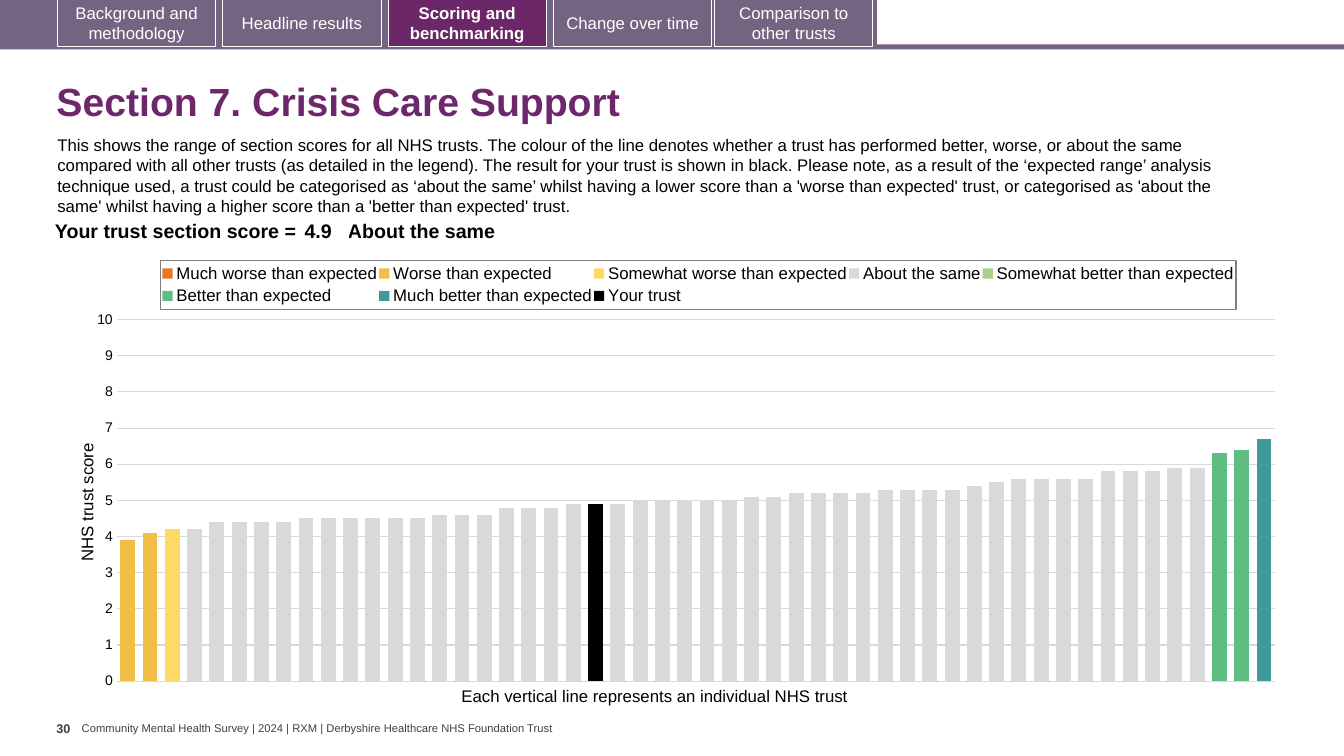
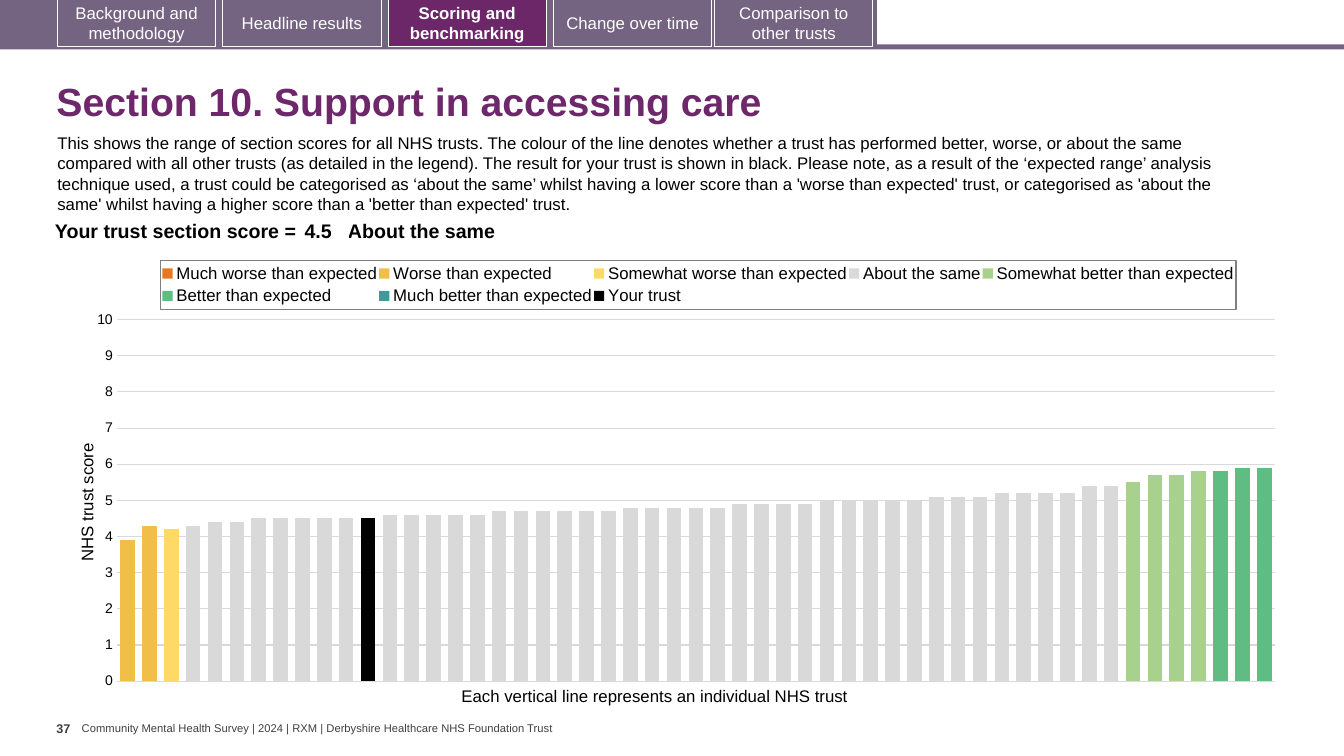
from copy import deepcopy
from dataclasses import dataclass

from pptx import Presentation
from pptx.chart.data import CategoryChartData as Data
from pptx.dml.color import RGBColor as Rgb
from pptx.enum.chart import XL_CHART_TYPE as Kind, XL_LEGEND_POSITION as Spot, XL_TICK_MARK as Tick
from pptx.enum.shapes import MSO_SHAPE as Form
from pptx.enum.text import MSO_ANCHOR as Anchor, MSO_AUTO_SIZE as Fit, PP_ALIGN as Align
from pptx.oxml import parse_xml
from pptx.oxml.ns import nsdecls, qn
from pptx.util import Inches, Pt


@dataclass(frozen=True)
class Theme:
    face: str = "Arial"
    band: str = "756382"
    live: str = "6B2768"
    head: str = "6D276A"
    ink: str = "000000"
    soft: str = "404040"
    white: str = "FFFFFF"
    grid: str = "D9D9D9"
    edge: str = "7F7F7F"
    huge: float = 28
    big: float = 14
    body: float = 12
    tick: float = 10
    page: float = 9
    foot: float = 8
    thin: float = 0.75


look = Theme()
deck = Presentation()
deck.slide_width, deck.slide_height = Inches(13.33), Inches(7.5)
col, row = deck.slide_width / 100, deck.slide_height / 100

tabs = [
    (4.28, "Background and methodology"),
    (16.58, "Headline results"),
    (28.88, "Scoring and benchmarking"),
    (41.18, "Change over time"),
    (53.18, "Comparison to other trusts"),
]
here = "Scoring and benchmarking"
note = (
    "This shows the range of section scores for all NHS trusts. The colour of the line denotes "
    "whether a trust has performed better, worse, or about the same compared with all other trusts "
    "(as detailed in the legend). The result for your trust is shown in black. Please note, as a "
    "result of the ‘expected range’ analysis technique used, a trust could be categorised as "
    "‘about the same’ whilst having a lower score than a 'worse than expected' trust, or "
    "categorised as 'about the same' whilst having a higher score than a 'better than expected' trust."
)
credit = "Community Mental Health Survey | 2024 | RXM | Derbyshire Healthcare NHS Foundation Trust"
hues = {
    "Much worse than expected": "E87722",
    "Worse than expected": "F1BE48",
    "Somewhat worse than expected": "FFD966",
    "About the same": "D9D9D9",
    "Somewhat better than expected": "A9D18E",
    "Better than expected": "5FBD83",
    "Much better than expected": "419999",
    "Your trust": "000000",
}
pages = [
    {
        "title": "Section 7. Crisis Care Support", "page": "30", "top": 17.2,
        "own": 21, "score": 4.9,
        "bands": {
            "Worse than expected": [3.9, 4.1],
            "Somewhat worse than expected": [4.2],
            "About the same": [
                4.2, 4.4, 4.4, 4.4, 4.4, 4.5, 4.5, 4.5, 4.5, 4.5, 4.5, 4.6, 4.6, 4.6, 4.8, 4.8,
                4.8, 4.9, 4.9, 4.9, 5, 5, 5, 5, 5, 5.1, 5.1, 5.2, 5.2, 5.2, 5.2, 5.3,
                5.3, 5.3, 5.3, 5.4, 5.5, 5.6, 5.6, 5.6, 5.6, 5.8, 5.8, 5.8, 5.9, 5.9],
            "Better than expected": [6.3, 6.4],
            "Much better than expected": [6.7],
        },
    },
    {
        "title": "Section 10. Support in accessing care", "page": "37", "top": 16.93,
        "own": 11, "score": 4.5,
        "bands": {
            "Worse than expected": [3.9, 4.3],
            "Somewhat worse than expected": [4.2],
            "About the same": [
                4.3, 4.4, 4.4, 4.5, 4.5, 4.5, 4.5, 4.5, 4.5, 4.6, 4.6, 4.6, 4.6, 4.6, 4.7,
                4.7, 4.7, 4.7, 4.7, 4.7, 4.8, 4.8, 4.8, 4.8, 4.8, 4.9, 4.9, 4.9, 4.9, 5,
                5, 5, 5, 5, 5.1, 5.1, 5.1, 5.2, 5.2, 5.2, 5.2, 5.4, 5.4],
            "Somewhat better than expected": [5.5, 5.7, 5.7, 5.8],
            "Better than expected": [5.8, 5.9, 5.9],
        },
    },
]
twin_axes = (
    """<c:catAx %s><c:axId val="501"/><c:scaling><c:orientation val="minMax"/></c:scaling>
    <c:delete val="1"/><c:axPos val="b"/><c:crossAx val="502"/></c:catAx>""",
    """<c:valAx %s><c:axId val="502"/><c:scaling><c:orientation val="minMax"/><c:max val="10"/>
    <c:min val="0"/></c:scaling><c:delete val="0"/><c:axPos val="r"/><c:majorTickMark val="out"/>
    <c:minorTickMark val="none"/><c:tickLblPos val="none"/><c:spPr><a:ln><a:noFill/></a:ln></c:spPr>
    <c:crossAx val="501"/><c:crosses val="max"/></c:valAx>""",
)


def write(frame, text, size, tone, bold=False, align=Align.LEFT):
    para = frame.paragraphs[0]
    para.alignment = align
    run = para.add_run()
    run.text = text
    for key, val in {"name": look.face, "size": Pt(size), "bold": bold}.items():
        setattr(run.font, key, val)
    run.font.color.rgb = Rgb.from_string(tone)


def seat(owner, slot, **box):
    old = owner.find(qn("c:layout"))
    if old is not None:
        owner.remove(old)
    inner = '<c:layoutTarget val="inner"/>' if slot == 0 else ""
    modes = "".join(f'<c:{key}Mode val="edge"/>' for key in "xy")
    sizes = "".join(f'<c:{key} val="{val}"/>' for key, val in box.items())
    xml = f'<c:layout {nsdecls("c")}><c:manualLayout>{inner}{modes}{sizes}</c:manualLayout></c:layout>'
    owner.insert(slot, parse_xml(xml))


for data in pages:
    slide = deck.slides.add_slide(deck.slide_layouts[5])
    shapes = slide.shapes

    blocks = [(0, 5.87, 100, 0.67, look.band, ""), (0, 0, 65.25, 6.27, look.band, "")]
    blocks += [(x, 0, 11.78, 6.13, look.live if name == here else look.band, name) for x, name in tabs]
    for x, y, w, h, tone, name in blocks:
        block = shapes.add_shape(Form.RECTANGLE, int(x * col), int(y * row), int(w * col), int(h * row))
        block.shadow.inherit = False
        block.fill.solid()
        block.fill.fore_color.rgb = Rgb.from_string(tone)
        block.line.fill.background()
        if name:
            block.line.color.rgb = Rgb.from_string(look.white)
            block.line.width = Pt(look.thin)
            block.text_frame.vertical_anchor = Anchor.MIDDLE
            write(block.text_frame, name, look.body, look.white, name == here, Align.CENTER)

    title = shapes.title
    spot = {"left": 3.45 * col, "top": 8.93 * row, "width": 93.68 * col, "height": 9.6 * row}
    for key, val in spot.items():
        setattr(title, key, int(val))
    for key, val in {"vertical_anchor": Anchor.MIDDLE, "auto_size": Fit.NONE, "word_wrap": True}.items():
        setattr(title.text_frame, key, val)
    write(title.text_frame, data["title"], look.huge, look.head, True)
    title.text_frame.paragraphs[0].line_spacing = 0.9

    feed = Data(number_format="0.0")
    total = sum(len(vals) for vals in data["bands"].values())
    feed.categories = [str(n + 1) for n in range(total)]
    start = 0
    for name in hues:
        vals = data["bands"].get(name, [])
        if name == "Your trust":
            start, vals = data["own"], [data["score"]]
        feed.add_series(name, [None] * start + vals + [None] * (total - start - len(vals)))
        start += len(vals)
    chart = shapes.add_chart(
        Kind.COLUMN_CLUSTERED, int(5.03 * col), int(32.93 * row), int(91.13 * col), int(59.2 * row), feed
    ).chart
    chart.has_title = False
    chart.has_legend = True
    legend, axis, plot = chart.legend, chart.value_axis, chart.plots[0]
    chart.category_axis.visible = False
    for key, val in {"gap_width": 50, "overlap": 100, "vary_by_categories": False}.items():
        setattr(plot, key, val)
    for line, tone in zip(plot.series, hues.values()):
        line.format.fill.solid()
        line.format.fill.fore_color.rgb = Rgb.from_string(tone)

    scale = {"minimum_scale": 0, "maximum_scale": 10, "major_unit": 1, "major_tick_mark": Tick.NONE}
    for key, val in scale.items():
        setattr(axis, key, val)
    axis.format.line.fill.background()
    axis.major_gridlines.format.line.color.rgb = Rgb.from_string(look.grid)
    axis.major_gridlines.format.line.width = Pt(look.thin)
    axis.tick_labels.number_format = "0"
    axis.tick_labels.number_format_is_linked = False
    label = axis.axis_title
    write(label.text_frame, "NHS trust score", look.body, look.ink, align=Align.CENTER)
    label.text_frame._txBody.bodyPr.set("rot", "-5400000")
    legend.position = Spot.TOP
    legend.include_in_layout = False
    for font, size in [(chart.font, look.tick), (axis.tick_labels.font, look.tick), (legend.font, look.body)]:
        for key, val in {"name": look.face, "size": Pt(size), "bold": False}.items():
            setattr(font, key, val)
        font.color.rgb = Rgb.from_string(look.ink)

    frame = legend._element
    frame.find(qn("c:overlay")).addnext(parse_xml(
        f'<c:spPr {nsdecls("c", "a")}><a:ln w="{Pt(look.thin)}"><a:solidFill>'
        f'<a:srgbClr val="{look.edge}"/></a:solidFill></a:ln></c:spPr>'
    ))
    area = chart._chartSpace.chart.plotArea
    seat(frame, 1, x=0.076, y=0.025, w=0.878, h=0.11)
    seat(label._element, 1, x=0.005, y=0.427)
    seat(area, 0, x=0.04, y=0.158, w=0.946, h=0.808)

    bars = area.find(qn("c:barChart"))
    twin = deepcopy(bars)
    bars.remove(bars.findall(qn("c:ser"))[-1])
    for item in twin.findall(qn("c:ser"))[:-1]:
        twin.remove(item)
    for item, mark in zip(twin.findall(qn("c:axId")), ("501", "502")):
        item.set("val", mark)
    bars.addnext(twin)
    last = area.find(qn("c:valAx"))
    for xml in reversed(twin_axes):
        last.addnext(parse_xml(xml % nsdecls("c", "a")))

    grid = shapes.add_table(1, 3, int(2.63 * col), int(28.67 * row), int(87.69 * col), int(4.13 * row)).table
    grid.first_row = grid.horz_banding = False
    cells = [
        (19.73, "Your trust section score =", Align.RIGHT, 0.04),
        (3.53, str(data["score"]), Align.LEFT, 0.04),
        (64.43, "About the same", Align.LEFT, 0),
    ]
    for n, (wide, text, align, pad) in enumerate(cells):
        grid.columns[n].width = int(wide * col)
        cell = grid.cell(0, n)
        cell.fill.background()
        for side, gap in {"left": pad, "right": pad, "top": 0.04, "bottom": 0.04}.items():
            setattr(cell, f"margin_{side}", Inches(gap))
        write(cell.text_frame, text, look.big, look.ink, True, align)

    texts = [
        (3.53, data["top"], 90.98, 12.13, 0.1, 0.05, note, look.body, look.ink, False),
        (33.6, 90, 30.83, 4, 0.1, 0.05, "Each vertical line represents an individual NHS trust",
         look.body, look.ink, False),
        (4.2, 94.67, 1.88, 5.33, 0, 0.05, data["page"], look.page, look.soft, True),
        (6.08, 95.47, 35.48, 1.73, 0, 0, credit, look.foot, look.soft, False),
    ]
    for x, y, w, h, side, rim, text, size, tone, bold in texts:
        box = shapes.add_textbox(int(x * col), int(y * row), int(w * col), int(h * row)).text_frame
        box.word_wrap = True
        box.margin_left = box.margin_right = Inches(side)
        box.margin_top = box.margin_bottom = Inches(rim)
        if text == credit:
            box.vertical_anchor = Anchor.MIDDLE
        write(box, text, size, tone, bold)

deck.save("out.pptx")
